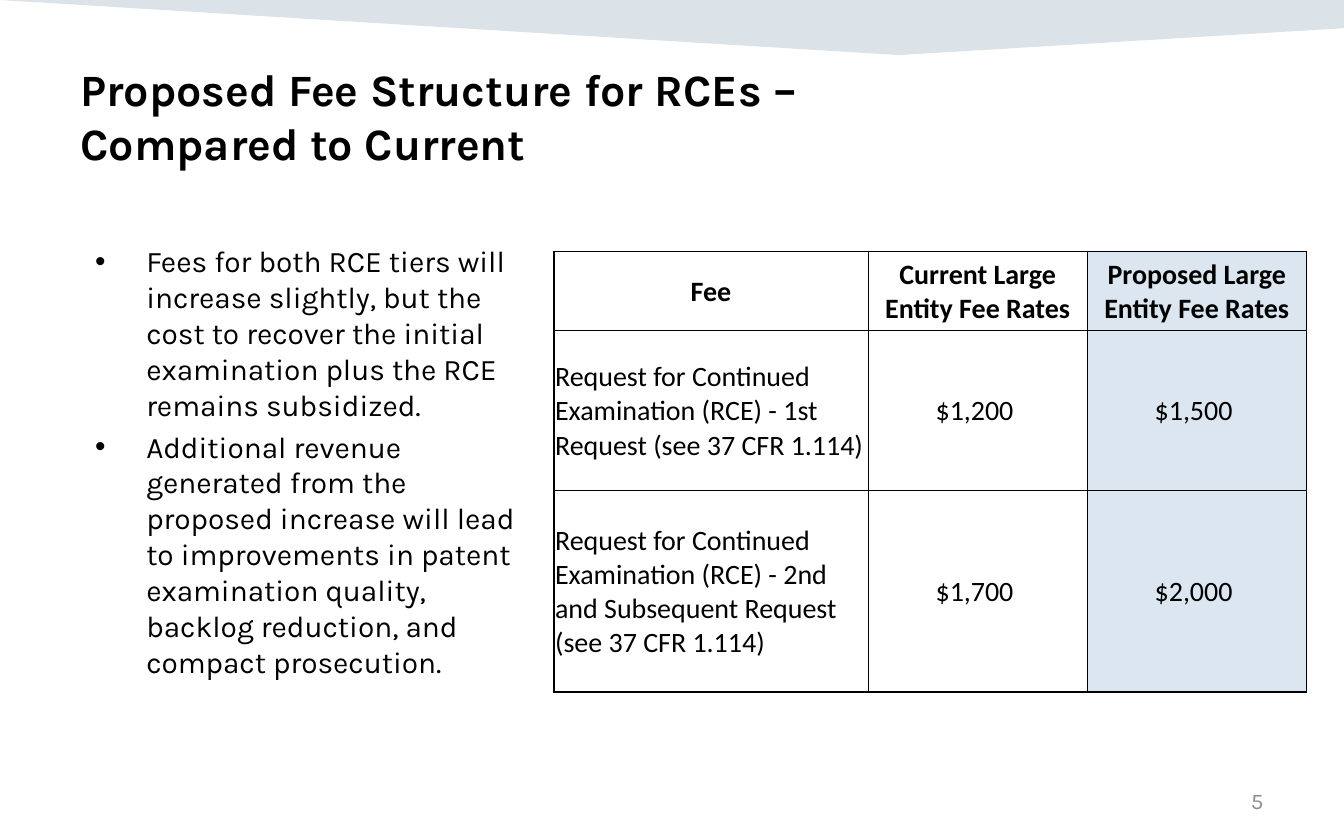
from dataclasses import dataclass

from lxml.etree import SubElement
from pptx import Presentation
from pptx.dml.color import RGBColor
from pptx.enum.text import MSO_ANCHOR as Anchor, PP_ALIGN as Align
from pptx.oxml import parse_xml
from pptx.oxml.ns import nsdecls, qn
from pptx.util import Inches, Pt


@dataclass(frozen=True)
class Theme:
    heading_font: str = "Karla"
    table_font: str = "Calibri"
    ink: str = "000000"
    muted: str = "8C8C8C"
    paper: str = "FFFFFF"
    highlight: str = "DCE6F1"
    banner: str = "164469"
    banner_opacity: int = 15
    title_size: int = 24
    body_size: int = 16
    table_size: int = 15
    number_size: int = 12
    outer_line: float = 1
    inner_line: float = 0.5


THEME = Theme()

TITLE = "Proposed Fee Structure for RCEs –\vCompared to Current"
POINTS = [
    "Fees for both RCE tiers will increase slightly, but the cost to recover "
    "the initial examination plus the RCE remains subsidized.",
    "Additional revenue generated from the proposed increase will lead to "
    "improvements in patent examination quality, backlog reduction, and "
    "compact prosecution.",
]
FEES = [
    ("Fee", "Current Large Entity Fee Rates", "Proposed Large Entity Fee Rates"),
    ("Request for Continued Examination (RCE) - 1st Request (see 37 CFR 1.114)",
     "$1,200 ", "$1,500 "),
    ("Request for Continued Examination (RCE) - 2nd and Subsequent Request "
     "(see 37 CFR 1.114)", "$1,700 ", "$2,000 "),
]
PAGE_NUMBER = "5"

BANNER_POINTS = [(0, 0), (10, 0), (10, 0.21), (6.69, 0.41)]
COLUMN_WIDTHS = [2.34, 1.63, 1.63]
ROW_HEIGHTS = [0.59, 1.19, 1.5]


def set_font(para, name, size, color, bold=False):
    font = para.font
    font.name, font.size, font.bold = name, Pt(size), bold
    font.color.rgb = RGBColor.from_string(color)


def add_text_frame(page, left, top, width, height):
    box = page.shapes.add_textbox(*map(Inches, (left, top, width, height)))
    box.text_frame.word_wrap = True
    return box.text_frame


def add_banner(page):
    start, *corners = [(Inches(x), Inches(y)) for x, y in BANNER_POINTS]
    builder = page.shapes.build_freeform(*start)
    builder.add_line_segments(corners, close=True)
    banner = builder.convert_to_shape()
    banner.shadow.inherit = False
    banner.line.fill.background()
    banner.fill.solid()
    banner.fill.fore_color.rgb = RGBColor.from_string(THEME.banner)
    color = banner._element.spPr.find(qn("a:solidFill"))[0]
    SubElement(color, qn("a:alpha")).set("val", str(THEME.banner_opacity * 1000))


def add_title(page):
    para = add_text_frame(page, 0.5, 0.41, 9, 0.51).paragraphs[0]
    para.text = TITLE
    set_font(para, THEME.heading_font, THEME.title_size, THEME.ink, bold=True)


def add_points(page):
    frame = add_text_frame(page, 0.61, 1.76, 3.48, 3.58)
    for index, point in enumerate(POINTS):
        para = frame.add_paragraph() if index else frame.paragraphs[0]
        para.text = point
        props = para._p.get_or_add_pPr()
        props.set("marL", str(Inches(0.38)))
        props.set("indent", str(-Inches(0.38)))
        SubElement(props, qn("a:buFont")).set("typeface", "Arial")
        SubElement(props, qn("a:buChar")).set("char", "•")
        if index:
            para.space_before = Pt(0.2 * THEME.body_size)
        set_font(para, THEME.heading_font, THEME.body_size, THEME.ink)


def add_page_number(page):
    frame = add_text_frame(page, 7.17, 5.79, 2.33, 0.33)
    frame.vertical_anchor = Anchor.MIDDLE
    para = frame.paragraphs[0]
    para.text = PAGE_NUMBER
    para.alignment = Align.RIGHT
    set_font(para, THEME.heading_font, THEME.number_size, THEME.muted)


def set_borders(cell, row, column):
    """Draw heavier lines where the cell touches the edge of the table."""
    on_edge = {
        "lnL": column == 0,
        "lnR": column == len(COLUMN_WIDTHS) - 1,
        "lnT": row == 0,
        "lnB": row == len(ROW_HEIGHTS) - 1,
    }
    props = cell._tc.get_or_add_tcPr()
    for place, (tag, outer) in enumerate(on_edge.items()):
        width = Pt(THEME.outer_line if outer else THEME.inner_line)
        props.insert(place, parse_xml(
            f'<a:{tag} {nsdecls("a")} w="{width}"><a:solidFill>'
            f'<a:srgbClr val="{THEME.ink}"/></a:solidFill></a:{tag}>'))


def fill_cell(cell, text, row, column):
    cell.margin_left = cell.margin_right = cell.margin_top = Inches(0.01)
    cell.margin_bottom = 0
    cell.vertical_anchor = Anchor.MIDDLE
    is_header, is_proposed = row == 0, column == 2
    cell.fill.solid()
    cell.fill.fore_color.rgb = RGBColor.from_string(
        THEME.highlight if is_proposed else THEME.paper)
    set_borders(cell, row, column)
    para = cell.text_frame.paragraphs[0]
    para.text = text
    para.alignment = Align.CENTER if is_header or column else Align.LEFT
    set_font(para, THEME.table_font, THEME.table_size, THEME.ink, bold=is_header)


def add_fee_table(page):
    size = sum(COLUMN_WIDTHS), sum(ROW_HEIGHTS)
    table = page.shapes.add_table(
        len(FEES), len(COLUMN_WIDTHS), *map(Inches, (4.12, 1.87, *size))).table
    table.horz_banding = False
    for column, width in zip(table.columns, COLUMN_WIDTHS):
        column.width = Inches(width)
    for row, height in zip(table.rows, ROW_HEIGHTS):
        row.height = Inches(height)
    for row, texts in enumerate(FEES):
        for column, text in enumerate(texts):
            fill_cell(table.cell(row, column), text, row, column)


def main():
    deck = Presentation()
    deck.slide_width, deck.slide_height = Inches(10), Inches(6.25)
    page = deck.slides.add_slide(deck.slide_layouts[6])
    for add_part in (add_banner, add_title, add_page_number, add_points,
                     add_fee_table):
        add_part(page)
    deck.save("out.pptx")


if __name__ == "__main__":
    main()
